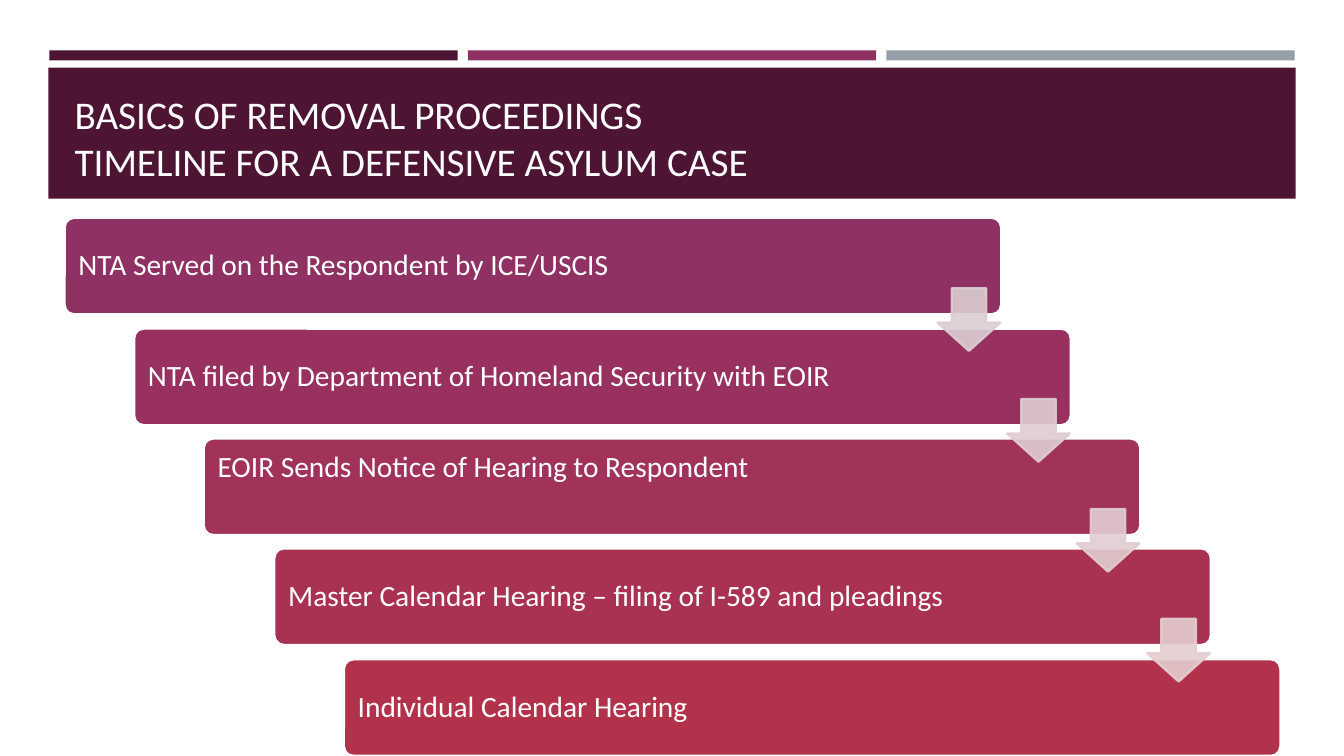
"""Build the slide on the timeline of a defensive asylum case."""
from pptx import Presentation
from pptx.dml.color import RGBColor
from pptx.enum.shapes import MSO_SHAPE
from pptx.enum.text import MSO_ANCHOR, MSO_AUTO_SIZE, PP_ALIGN
from pptx.oxml.ns import qn
from pptx.oxml.xmlchemy import OxmlElement
from pptx.util import Emu, Pt

EMU_PER_PX = 9144
RECTANGLE = MSO_SHAPE.RECTANGLE
ROUNDED = MSO_SHAPE.ROUNDED_RECTANGLE
DOWN_ARROW = MSO_SHAPE.DOWN_ARROW
TOP, MIDDLE, BOTTOM = MSO_ANCHOR.TOP, MSO_ANCHOR.MIDDLE, MSO_ANCHOR.BOTTOM
LEFT = PP_ALIGN.LEFT
NO_AUTOFIT = MSO_AUTO_SIZE.NONE

FONT = "Calibri"
WHITE = RGBColor(0xFF, 0xFF, 0xFF)
DARK_PLUM = RGBColor(0x4D, 0x14, 0x34)
PLUM = RGBColor(0x90, 0x31, 0x63)
GREY = RGBColor(0x96, 0x9F, 0xA7)

TITLE = "BASICS OF REMOVAL PROCEEDINGS\vTIMELINE FOR A DEFENSIVE ASYLUM CASE"
STEPS = [
    ("NTA Served on the Respondent by ICE/USCIS", PLUM, MIDDLE),
    ("NTA filed by Department of Homeland Security with EOIR",
     RGBColor(0x98, 0x31, 0x5F), MIDDLE),
    ("EOIR Sends Notice of Hearing to Respondent",
     RGBColor(0xA1, 0x32, 0x5A), TOP),
    ("Master Calendar Hearing – filing of I-589 and pleadings",
     RGBColor(0xA9, 0x32, 0x53), MIDDLE),
    ("Individual Calendar Hearing", RGBColor(0xB2, 0x32, 0x4B), MIDDLE),
]
ARROW_COLORS = [
    RGBColor(0xDB, 0xCE, 0xD3),
    RGBColor(0xDE, 0xCD, 0xD2),
    RGBColor(0xE1, 0xCD, 0xD1),
    RGBColor(0xE4, 0xCE, 0xD0),
]
STEP_RIGHT, STEP_DOWN = 69.25, 109.5


def px(length):
    return Emu(length * EMU_PER_PX)


def set_attributes(target, values):
    for name, value in values.items():
        setattr(target, name, value)


def add_filled_shape(slide, kind, box, fill, line=None):
    shape = slide.shapes.add_shape(kind, *map(px, box))
    shape.shadow.inherit = False
    shape.fill.solid()
    shape.fill.fore_color.rgb = fill
    if line is None:
        shape.line.fill.background()
    else:
        shape.line.color.rgb = line
        shape.line.width = Pt(1.75)
    return shape


def write_text(shape, text, size, frame_format, paragraph_format):
    frame = shape.text_frame
    frame.text = text
    set_attributes(frame, {"word_wrap": True, "auto_size": NO_AUTOFIT, **frame_format})
    paragraph = frame.paragraphs[0]
    set_attributes(paragraph, {"alignment": LEFT, **paragraph_format})
    for run in paragraph.runs:
        set_attributes(run.font, {"name": FONT, "size": Pt(size)})
        run.font.color.rgb = WHITE


def add_header(slide):
    for column, color in enumerate((DARK_PLUM, PLUM, GREY)):
        add_filled_shape(slide, RECTANGLE, (49 + 415 * column, 50, 405, 10), color)
    add_filled_shape(slide, RECTANGLE, (48, 67, 1237, 130), DARK_PLUM)
    title = slide.shapes.title
    set_attributes(title, {"left": px(64), "top": px(77),
                           "width": px(1206), "height": px(111)})
    write_text(title, TITLE, 28, {"vertical_anchor": BOTTOM}, {})
    slide.shapes.element.append(title.element)


def add_step(slide, index, text, color, anchor):
    box = (64 + round(STEP_RIGHT * index), 216 + round(STEP_DOWN * index), 929, 96)
    bar = add_filled_shape(slide, ROUNDED, box, color, WHITE)
    bar.adjustments[0] = 0.1
    margins = {"margin_left": px(11), "margin_right": px(11),
               "margin_top": px(11), "margin_bottom": px(11)}
    write_text(bar, text, 21, {"vertical_anchor": anchor, **margins},
               {"line_spacing": 0.9})


def add_arrow(slide, index, color):
    box = (930 + round(STEP_RIGHT * index), 286 + round(STEP_DOWN * index), 62, 62)
    arrow = add_filled_shape(slide, DOWN_ARROW, box, color, color)
    arrow.adjustments[0] = 0.55
    arrow.adjustments[1] = 0.45
    for color_element in arrow.element.iter(qn("a:srgbClr")):
        alpha = OxmlElement("a:alpha")
        alpha.set("val", "90000")
        color_element.append(alpha)


def main():
    presentation = Presentation()
    presentation.slide_width = px(1333)
    presentation.slide_height = px(750)
    slide = presentation.slides.add_slide(presentation.slide_layouts[5])
    add_header(slide)
    for index, step in enumerate(STEPS):
        add_step(slide, index, *step)
    for index, color in enumerate(ARROW_COLORS):
        add_arrow(slide, index, color)
    presentation.save("out.pptx")


if __name__ == "__main__":
    main()
